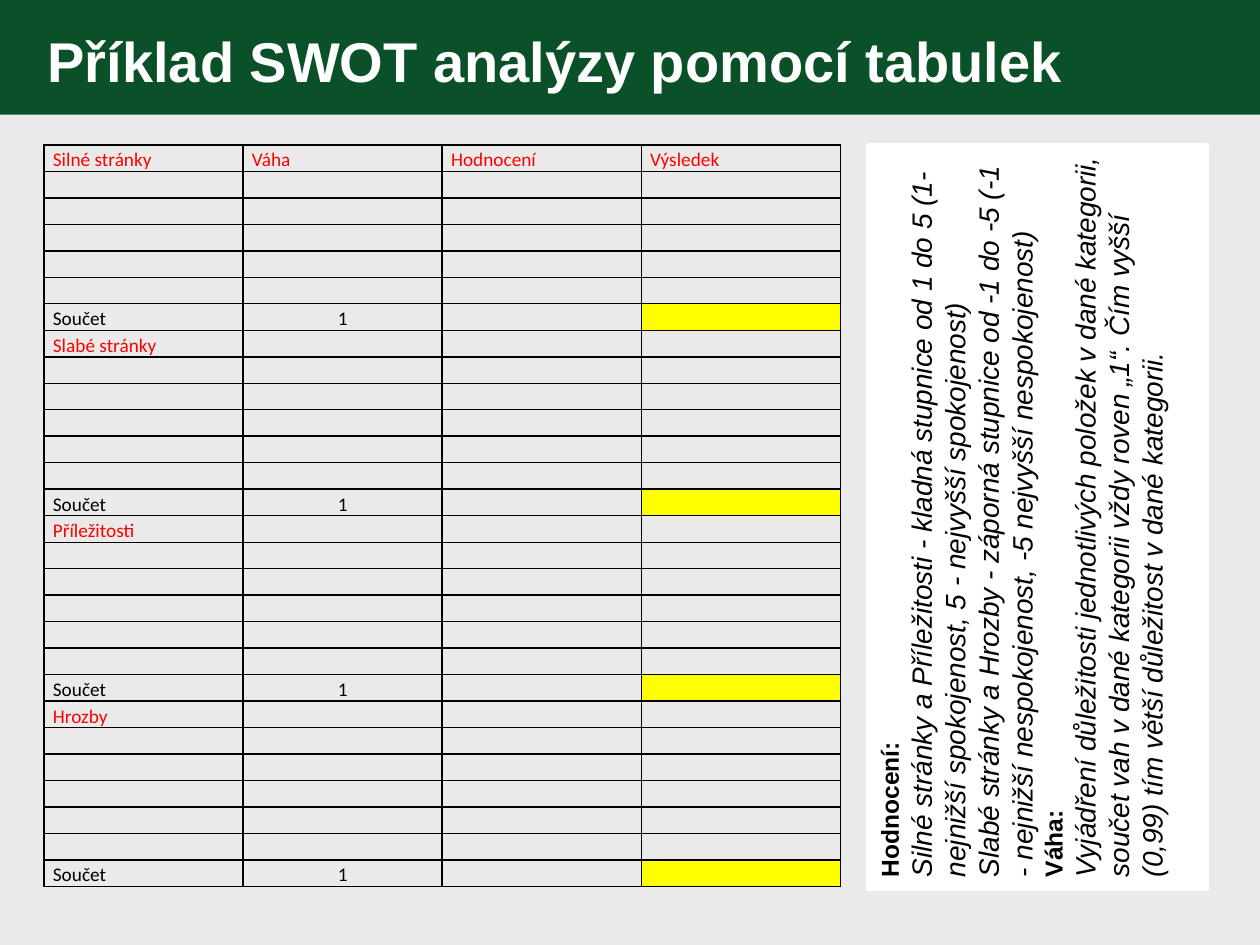
"""Builds a slide with a SWOT scoring table and a sideways legend."""
from dataclasses import dataclass

from lxml import etree
from pptx import Presentation
from pptx import util as u
from pptx.dml.color import RGBColor
from pptx.enum import shapes, text
from pptx.oxml import ns


@dataclass(frozen=True)
class Theme:
    page: str = "EAEAEA"
    band: str = "0A5028"
    white: str = "FFFFFF"
    black: str = "000000"
    heading: str = "FF0000"
    result: str = "FFFF00"
    sans: str = "Arial"
    table_font: str = "Calibri"
    title_size: int = 32
    legend_head: int = 14
    legend_body: int = 16
    table_size: int = 11


def add_run(paragraph, wording, size, face, color, bold=False, italic=False):
    run = paragraph.add_run()
    run.text = wording
    run.font.size, run.font.name = u.Pt(size), face
    run.font.bold, run.font.italic = bold, italic
    run.font.color.rgb = RGBColor.from_string(color)


def add_borders(cell, color):
    properties = cell._tc.get_or_add_tcPr()
    for side in ("lnL", "lnR", "lnT", "lnB"):
        line = etree.SubElement(properties, ns.qn(f"a:{side}"), w=str(u.Pt(1)))
        fill = etree.SubElement(line, ns.qn("a:solidFill"))
        etree.SubElement(fill, ns.qn("a:srgbClr"), val=color)


theme = Theme()
deck = Presentation()
deck.slide_width, deck.slide_height = u.Inches(10), u.Inches(7.5)
slide = deck.slides.add_slide(deck.slide_layouts[6])
slide.background.fill.solid()
slide.background.fill.fore_color.rgb = RGBColor.from_string(theme.page)

band = slide.shapes.add_shape(shapes.MSO_SHAPE.RECTANGLE, 0, 0, deck.slide_width, u.Inches(0.91))
band.shadow.inherit = False
band.fill.solid()
band.fill.fore_color.rgb = RGBColor.from_string(theme.band)
band.line.fill.background()

title = slide.shapes.add_textbox(u.Inches(0.28), u.Inches(0.05), u.Inches(9.21), u.Inches(0.85)).text_frame
title.word_wrap = True
title.vertical_anchor = text.MSO_ANCHOR.MIDDLE
add_run(title.paragraphs[0], "Příklad SWOT analýzy pomocí tabulek",
        theme.title_size, theme.sans, theme.white, bold=True)

categories = ["Silné stránky", "Slabé stránky", "Příležitosti", "Hrozby"]
measures = ["Váha", "Hodnocení", "Výsledek"]
blank_rows = 5
block = blank_rows + 2
row_count, column_count = block * len(categories), len(measures) + 1

labels = {(0, column): measure for column, measure in enumerate(measures, 1)}
for index, category in enumerate(categories):
    labels[index * block, 0] = category
    labels[index * block + block - 1, 0] = "Součet"
    labels[index * block + block - 1, 1] = "1"

scores = slide.shapes.add_table(row_count, column_count, u.Inches(0.35), u.Inches(1.15),
                                u.Inches(1.58 * column_count), u.Inches(0.21 * row_count)).table
scores.first_row = scores.horz_banding = False
for row in range(row_count):
    scores.rows[row].height = u.Inches(0.21)
    is_total = row % block == block - 1
    for column in range(column_count):
        cell = scores.cell(row, column)
        cell.margin_left = cell.margin_right = u.Inches(0.07)
        cell.margin_top = cell.margin_bottom = 0
        add_borders(cell, theme.black)
        if is_total and column == column_count - 1:
            cell.fill.solid()
            cell.fill.fore_color.rgb = RGBColor.from_string(theme.result)
        else:
            cell.fill.background()
        entry = cell.text_frame.paragraphs[0]
        entry.line_spacing = 1.15
        if (row, column) in labels:
            add_run(entry, labels[row, column], theme.table_size, theme.table_font,
                    theme.black if is_total else theme.heading)
            if column and is_total:
                entry.alignment = text.PP_ALIGN.CENTER
        else:
            ending = etree.SubElement(entry._p, ns.qn("a:endParaRPr"), sz=str(theme.table_size * 100))
            etree.SubElement(ending, ns.qn("a:latin"), typeface=theme.table_font)

legend = slide.shapes.add_shape(shapes.MSO_SHAPE.RECTANGLE, u.Inches(6.89), u.Inches(1.15),
                                u.Inches(2.69), u.Inches(5.91))
legend.shadow.inherit = False
legend.fill.solid()
legend.fill.fore_color.rgb = RGBColor.from_string(theme.white)
legend.line.color.rgb = RGBColor.from_string(theme.white)
legend.line.width = u.Pt(2)
notes = legend.text_frame
notes.word_wrap = True
notes.vertical_anchor = text.MSO_ANCHOR.TOP
notes._txBody.bodyPr.set("vert", "vert270")

explanations = [
    ("Hodnocení:", True),
    ("Silné stránky a Příležitosti - kladná stupnice od 1 do 5 "
     "(1- nejnižší spokojenost, 5 - nejvyšší spokojenost)", False),
    ("Slabé stránky a Hrozby - záporná stupnice od -1 do -5 "
     "(-1 - nejnižší nespokojenost, -5 nejvyšší nespokojenost)", False),
    ("Váha:", True),
    ("Vyjádření důležitosti jednotlivých položek v dané kategorii, součet vah v dané kategorii "
     "vždy roven „1“. Čím vyšší (0,99) tím větší důležitost v dané kategorii.", False),
]
for index, (wording, is_head) in enumerate(explanations):
    line = notes.add_paragraph() if index else notes.paragraphs[0]
    line.alignment = text.PP_ALIGN.LEFT
    add_run(line, wording, theme.legend_head if is_head else theme.legend_body,
            theme.sans, theme.black, bold=is_head, italic=not is_head)

deck.save("out.pptx")
